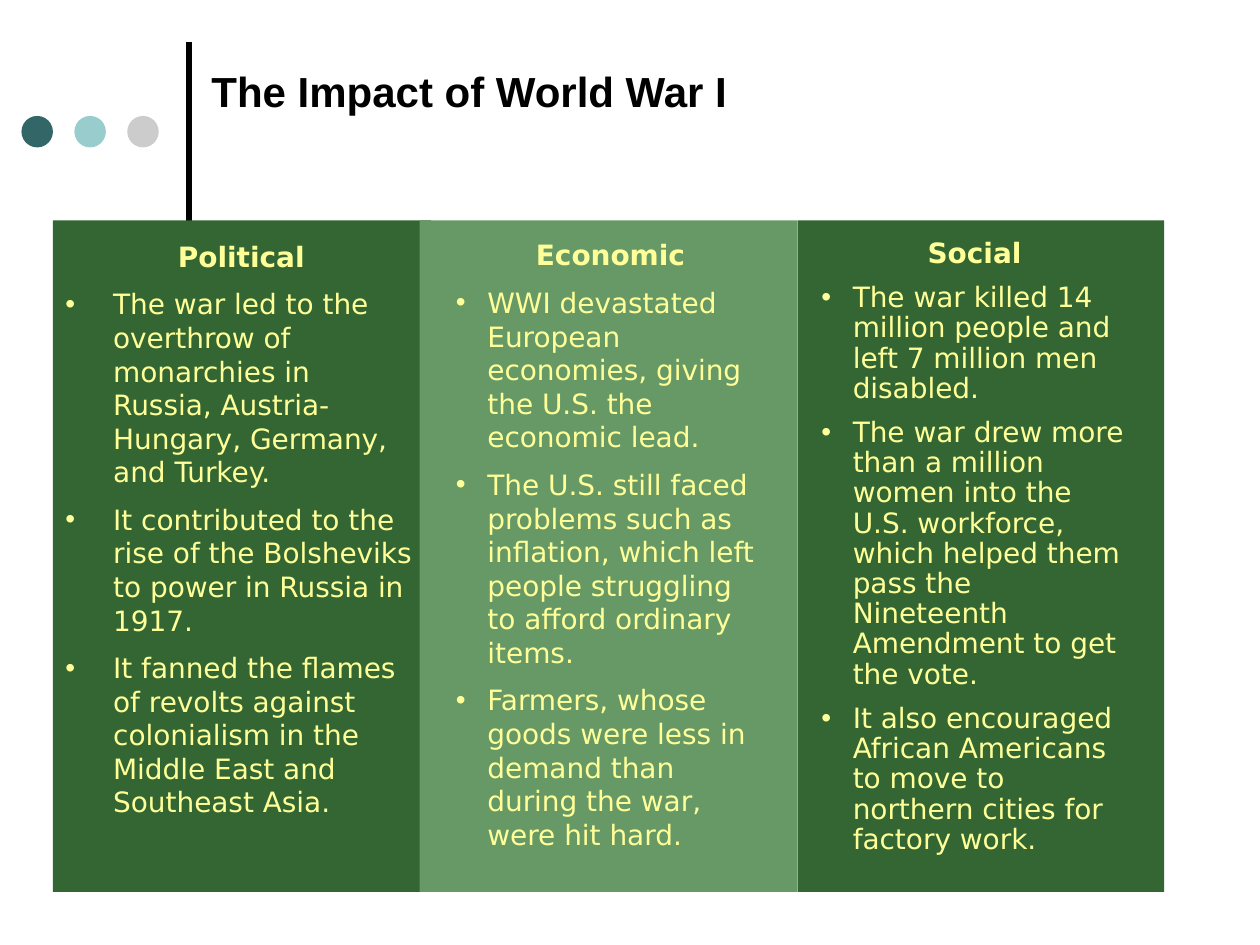
from lxml import etree
from pptx import Presentation
from pptx.dml.color import RGBColor
from pptx.enum.shapes import MSO_CONNECTOR, MSO_SHAPE
from pptx.enum.text import PP_ALIGN
from pptx.oxml.ns import qn
from pptx.util import Inches, Pt

RECTANGLE = MSO_SHAPE.RECTANGLE
OVAL = MSO_SHAPE.OVAL
STRAIGHT = MSO_CONNECTOR.STRAIGHT
CENTER = PP_ALIGN.CENTER
LEFT = PP_ALIGN.LEFT

DARK_GREEN = "336633"
LIGHT_GREEN = "669966"
CREAM = "FFFF99"
BLACK = "000000"
DOT_COLORS = ["336666", "99CCCC", "CCCCCC"]
PANEL_TOP, PANEL_HEIGHT = 1.75, 5.33

COLUMNS = [
    {
        "panel": (0.42, 3), "fill": DARK_GREEN,
        "text_box": (0.42, 1.85, 2.99, 4.78), "indent": 0.38, "line_spacing": 1.0,
        "heading": "Political",
        "points": [
            "The war led to the overthrow of monarchies in Russia, Austria-Hungary, Germany, and Turkey.",
            "It contributed to the rise of the Bolsheviks to power in Russia in 1917.",
            "It fanned the flames of revolts against colonialism in the Middle East and Southeast Asia.",
        ],
    },
    {
        "panel": (3.33, 3), "fill": LIGHT_GREEN,
        "text_box": (3.52, 1.84, 2.65, 5.23), "indent": 0.25, "line_spacing": 1.0,
        "heading": "Economic",
        "points": [
            "WWI devastated European economies, giving the U.S. the economic lead.",
            "The U.S. still faced problems such as inflation, which left people struggling to afford ordinary items.",
            "Farmers, whose goods were less in demand than during the war, were hit hard.",
        ],
    },
    {
        "panel": (6.33, 2.91), "fill": DARK_GREEN,
        "text_box": (6.42, 1.85, 2.63, 5.09), "indent": 0.25, "line_spacing": 0.9,
        "heading": "Social",
        "points": [
            "The war killed 14 million people and left 7 million men disabled.",
            "The war drew more than a million women into the U.S. workforce, "
            "which helped them pass the Nineteenth Amendment to get the vote.",
            "It also encouraged African Americans to move to northern cities for factory work.",
        ],
    },
]


def color(value):
    """Turn a hex string into a colour."""
    return RGBColor.from_string(value)


def add_filled_shape(page, kind, left, top, width, height, fill):
    """Add a plain shape without outline or shadow."""
    shape = page.shapes.add_shape(kind, Inches(left), Inches(top), Inches(width), Inches(height))
    shape.shadow.inherit = False
    shape.fill.solid()
    shape.fill.fore_color.rgb = color(fill)
    shape.line.fill.background()


def add_rule(page, left, top, bottom):
    """Add the thick vertical line beside the title."""
    rule = page.shapes.add_connector(STRAIGHT, Inches(left), Inches(bottom), Inches(left), Inches(top))
    rule.line.color.rgb = color(BLACK)
    rule.line.width = Pt(3)
    etree.SubElement(rule._element.spPr, qn("a:effectLst"))


def add_text_frame(page, left, top, width, height):
    """Add a wrapping text box and return its text frame."""
    box = page.shapes.add_textbox(Inches(left), Inches(top), Inches(width), Inches(height))
    box.text_frame.word_wrap = True
    return box.text_frame


def style_text(para, font, size, fill, bold):
    """Format every run of a paragraph."""
    for span in para.runs:
        span.font.name = font
        span.font.size = Pt(size)
        span.font.bold = bold
        span.font.color.rgb = color(fill)


def add_bullet(para, indent):
    """Give a paragraph a hanging round bullet."""
    properties = para._p.get_or_add_pPr()
    properties.set("marL", str(Inches(indent)))
    properties.set("indent", str(-Inches(indent)))
    etree.SubElement(properties, qn("a:buFont"), typeface="Arial")
    etree.SubElement(properties, qn("a:buChar"), char="•")


def add_title(page, text):
    """Add the slide title to the right of the rule."""
    frame = add_text_frame(page, 1.58, 0.47, 7.83, 0.78)
    frame.text = text
    style_text(frame.paragraphs[0], "Arial", 24, BLACK, True)


def add_column(page, column):
    """Add a coloured panel with its heading and bullet points."""
    left, width = column["panel"]
    add_filled_shape(page, RECTANGLE, left, PANEL_TOP, width, PANEL_HEIGHT, column["fill"])
    frame = add_text_frame(page, *column["text_box"])
    frame.text = "\n".join([column["heading"], *column["points"]])
    for index, para in enumerate(frame.paragraphs):
        is_heading = index == 0
        para.alignment = CENTER if is_heading else LEFT
        para.line_spacing = column["line_spacing"]
        para.space_before = Pt(0 if is_heading else 8)
        style_text(para, "DejaVu Sans", 16, CREAM, is_heading)
        if not is_heading:
            add_bullet(para, column["indent"])


def main():
    """Build the slide and save the deck."""
    deck = Presentation()
    deck.slide_width, deck.slide_height = Inches(10), Inches(7.5)
    page = deck.slides.add_slide(deck.slide_layouts[6])
    add_rule(page, 1.5, 0.33, PANEL_TOP)
    for index, fill in enumerate(DOT_COLORS):
        add_filled_shape(page, OVAL, 0.17 + 0.42 * index, 0.92, 0.25, 0.25, fill)
    add_title(page, "The Impact of World War I")
    for column in COLUMNS:
        add_column(page, column)
    deck.save("out.pptx")


if __name__ == "__main__":
    main()
